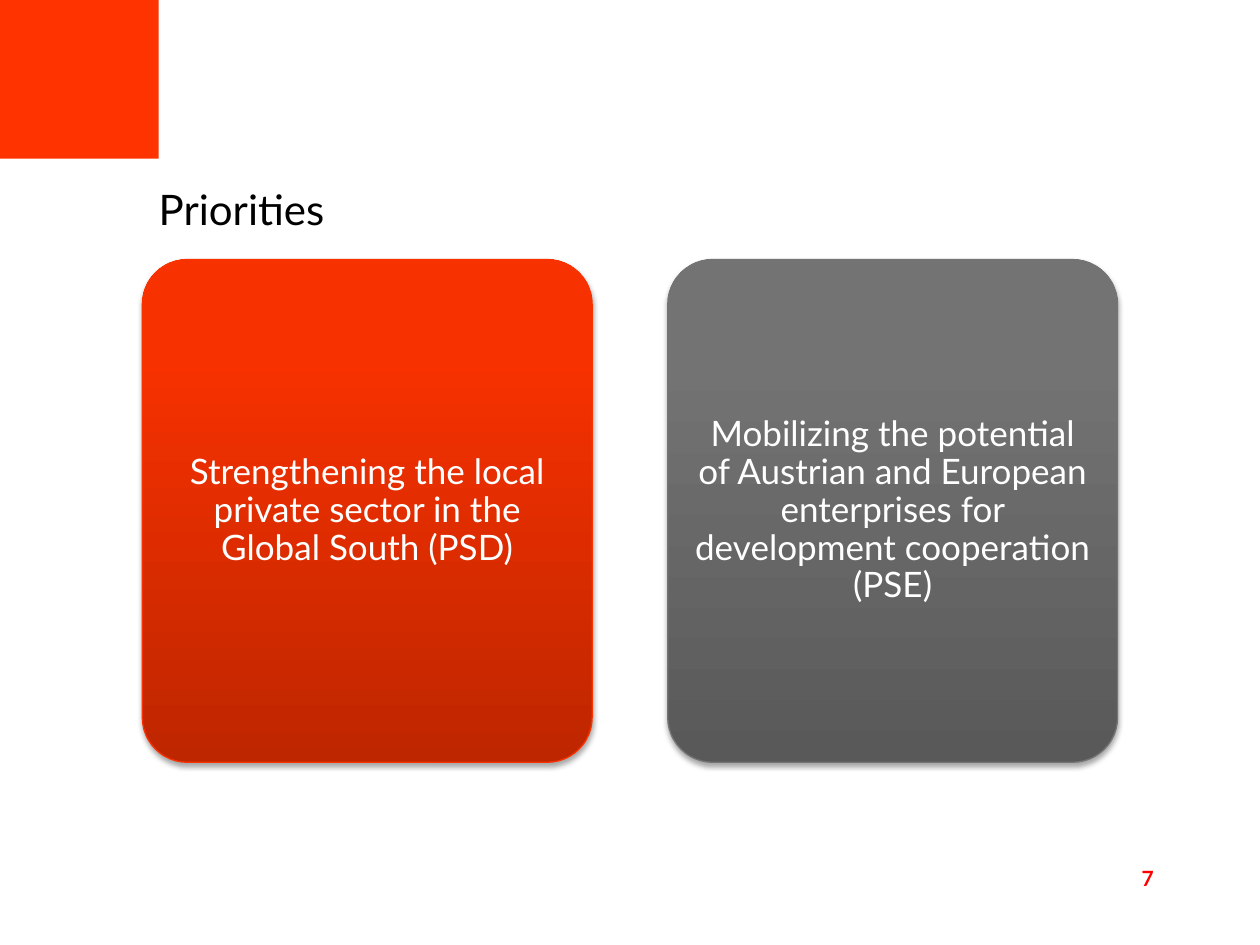
import copy

import pptx
import pptx.dml.color
import pptx.enum.shapes
import pptx.enum.text
import pptx.oxml
import pptx.oxml.ns
import pptx.util
from pptx.util import Inches

ANCHOR = pptx.enum.text.MSO_ANCHOR
ALIGN = pptx.enum.text.PP_ALIGN
SHAPE = pptx.enum.shapes.MSO_SHAPE
COLORS = {
    "corner": "FF3300",
    "title": "000000",
    "number": "FF0000",
    "card text": "FFFFFF",
    "red line": "F93200",
    "gray line": "747474",
}
GRADIENTS = {
    "red": ["BE2600", "F73100", "F83200"],
    "gray": ["595959", "737373", "747474"],
}
STOPS = [0, 0.8, 1]
SHADOW = (
    f'<a:outerShdw {pptx.oxml.ns.nsdecls("a")} blurRad="40000" dist="23000" '
    'dir="5400000" rotWithShape="0"><a:srgbClr val="000000">'
    '<a:alpha val="35000"/></a:srgbClr></a:outerShdw>'
)


def rgb(name):
    return pptx.dml.color.RGBColor.from_string(COLORS[name])


def write(shape, text, *, size, color, bold=False, align=ALIGN.LEFT,
          anchor=ANCHOR.TOP, margin=0, spacing=1.0):
    frame = shape.text_frame
    frame.word_wrap = True
    frame.vertical_anchor = anchor
    frame.margin_left = frame.margin_right = Inches(margin)
    frame.margin_top = frame.margin_bottom = Inches(margin)
    paragraph = frame.paragraphs[0]
    paragraph.alignment = align
    paragraph.line_spacing = spacing
    run = paragraph.add_run()
    run.text = text
    run.font.name = "Lato"
    run.font.size = pptx.util.Pt(size)
    run.font.bold = bold
    run.font.color.rgb = rgb(color)


deck = pptx.Presentation()
deck.slide_width, deck.slide_height = Inches(10), Inches(7.5)
slide = deck.slides.add_slide(deck.slide_layouts[6])

corner = slide.shapes.add_shape(SHAPE.RECTANGLE, 0, 0, Inches(1.26), Inches(1.26))
corner.shadow.inherit = False
corner.fill.solid()
corner.fill.fore_color.rgb = rgb("corner")
corner.line.fill.background()

title = slide.shapes.add_textbox(Inches(1.26), Inches(1.46), Inches(7.76), Inches(0.4))
write(title, "Priorities", size=24, color="title")

number = slide.shapes.add_textbox(Inches(9.06), Inches(6.77), Inches(0.68), Inches(0.4))
write(number, "7", size=12, color="number", bold=True, anchor=ANCHOR.MIDDLE)

priorities = [
    ("red", "Strengthening the local private sector in the Global South (PSD)"),
    ("gray", "Mobilizing the potential of Austrian and European enterprises "
             "for development cooperation (PSE)"),
]
for column, (tone, priority) in enumerate(priorities):
    card = slide.shapes.add_shape(
        SHAPE.ROUNDED_RECTANGLE, Inches(1.13 + 4.17 * column), Inches(2.06),
        Inches(3.57), Inches(3.99))
    card.adjustments[0] = 0.1
    card.line.color.rgb = rgb(f"{tone} line")
    card.line.width = pptx.util.Pt(0.75)

    card.fill.gradient()
    card.fill.gradient_angle = 90
    stop_list = card._element.spPr.find(".//" + pptx.oxml.ns.qn("a:gsLst"))
    stop_list.append(copy.deepcopy(stop_list[-1]))
    for stop, position, shade in zip(card.fill.gradient_stops, STOPS, GRADIENTS[tone]):
        stop.position = position
        stop.color.rgb = pptx.dml.color.RGBColor.from_string(shade)

    card.shadow.inherit = False
    effects = card._element.spPr.find(pptx.oxml.ns.qn("a:effectLst"))
    effects.append(pptx.oxml.parse_xml(SHADOW))
    write(card, priority, size=20, color="card text", align=ALIGN.CENTER,
          anchor=ANCHOR.MIDDLE, margin=0.08, spacing=0.9)

deck.save("out.pptx")
